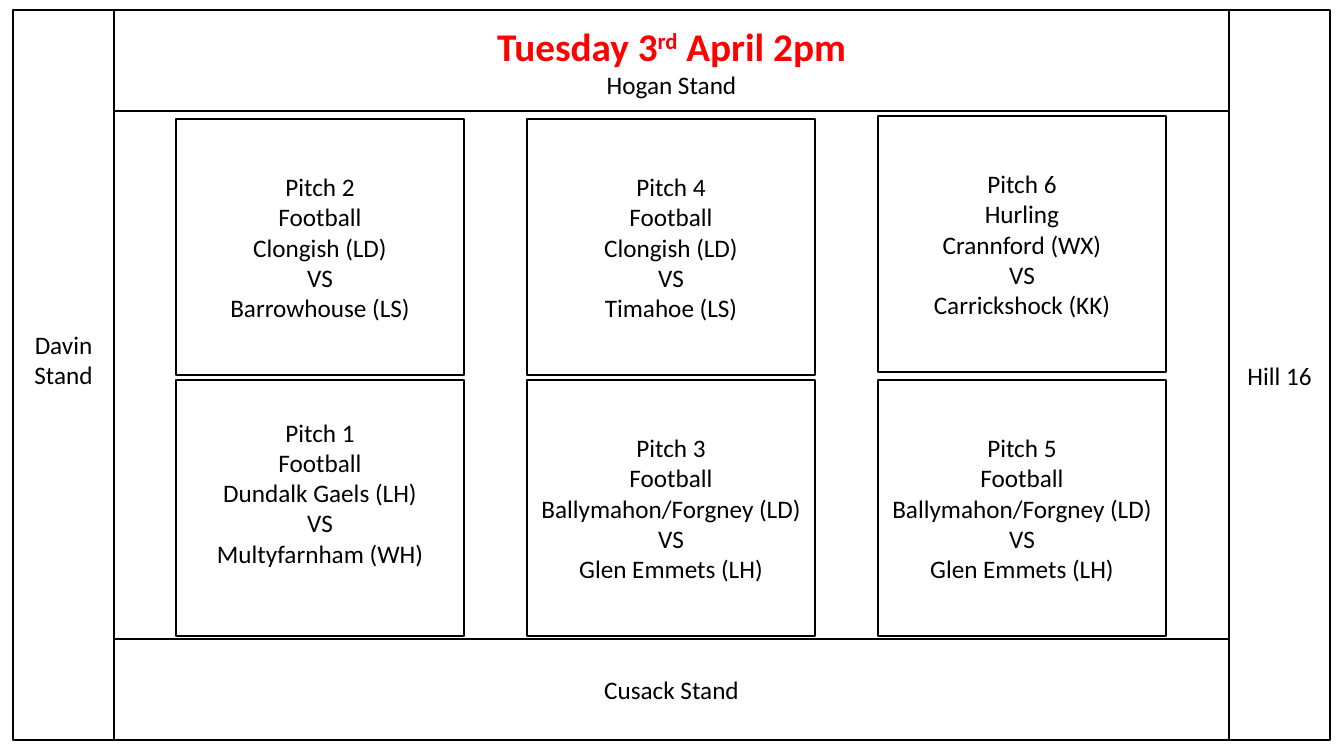
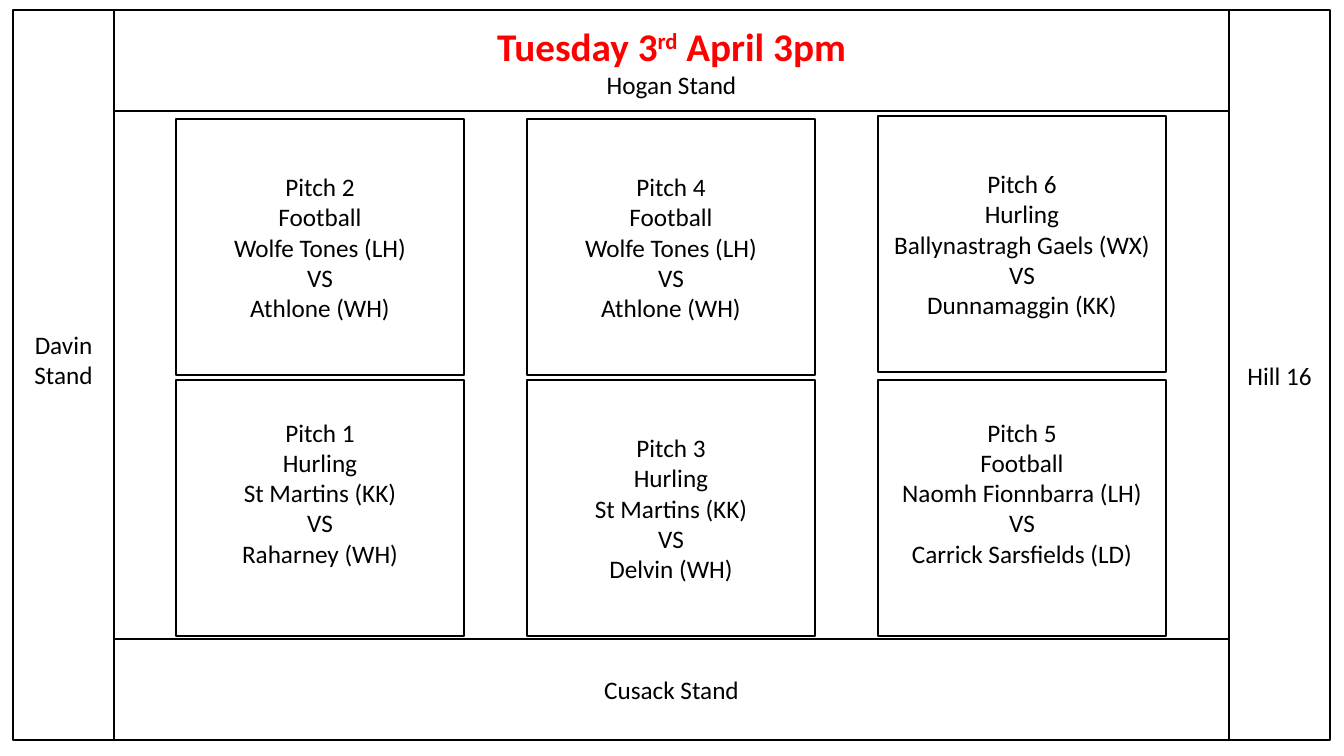
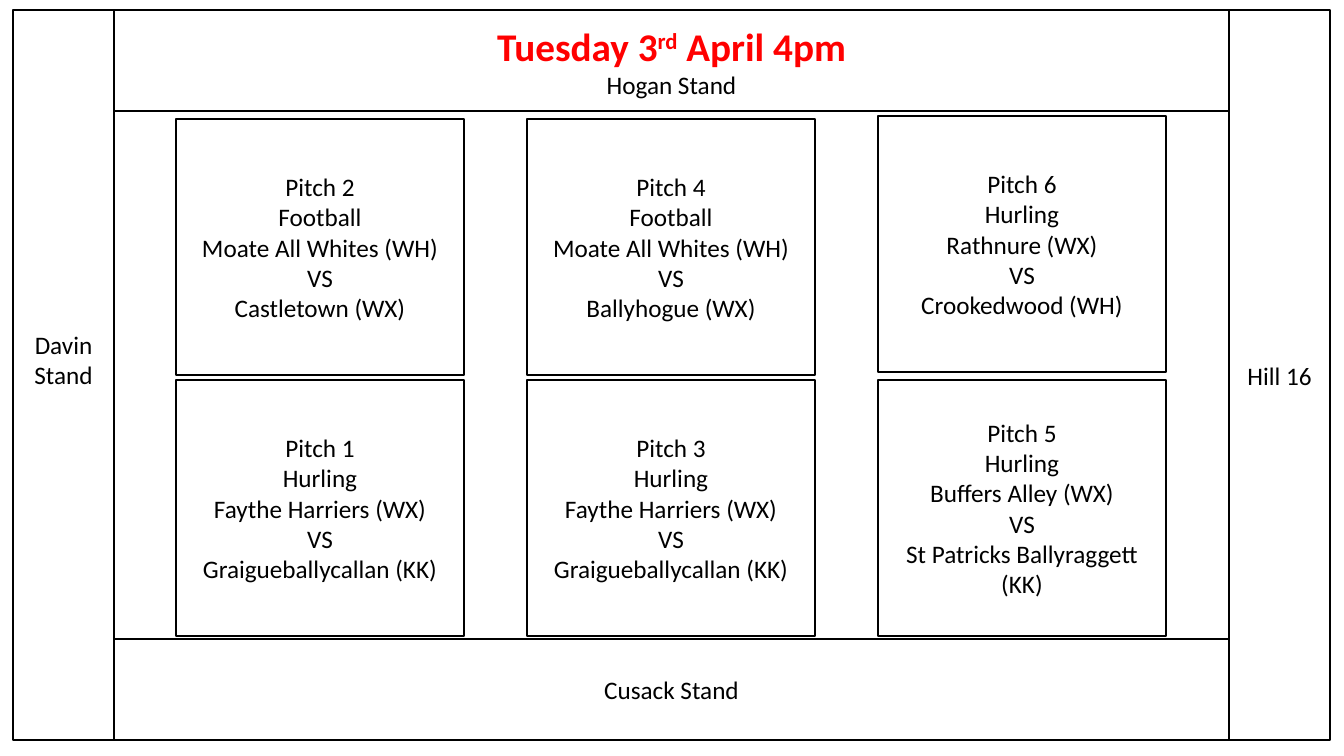
from pptx import Presentation
from pptx.dml.color import RGBColor
from pptx.enum.shapes import MSO_SHAPE
from pptx.enum.text import MSO_ANCHOR, PP_ALIGN
from pptx.util import Emu, Pt

ROUNDS = [
    ("2pm", {1}, [
        (2, "Football", "Clongish (LD)", "Barrowhouse (LS)"),
        (4, "Football", "Clongish (LD)", "Timahoe (LS)"),
        (6, "Hurling", "Crannford (WX)", "Carrickshock (KK)"),
        (1, "Football", "Dundalk Gaels (LH)", "Multyfarnham (WH)"),
        (3, "Football", "Ballymahon/Forgney (LD)", "Glen Emmets (LH)"),
        (5, "Football", "Ballymahon/Forgney (LD)", "Glen Emmets (LH)"),
    ]),
    ("3pm", {1, 5}, [
        (2, "Football", "Wolfe Tones (LH)", "Athlone (WH)"),
        (4, "Football", "Wolfe Tones (LH)", "Athlone (WH)"),
        (6, "Hurling", "Ballynastragh Gaels (WX)", "Dunnamaggin (KK)"),
        (1, "Hurling", "St Martins (KK)", "Raharney (WH)"),
        (3, "Hurling", "St Martins (KK)", "Delvin (WH)"),
        (5, "Football", "Naomh Fionnbarra (LH)", "Carrick Sarsfields (LD)"),
    ]),
    ("4pm", set(), [
        (2, "Football", "Moate All Whites (WH)", "Castletown (WX)"),
        (4, "Football", "Moate All Whites (WH)", "Ballyhogue (WX)"),
        (6, "Hurling", "Rathnure (WX)", "Crookedwood (WH)"),
        (1, "Hurling", "Faythe Harriers (WX)", "Graigueballycallan (KK)"),
        (3, "Hurling", "Faythe Harriers (WX)", "Graigueballycallan (KK)"),
        (5, "Hurling", "Buffers Alley (WX)", "St Patricks Ballyraggett (KK)"),
    ]),
]

WIDE, HIGH = 1344, 756
LEFT, TOP, BAND = 13, 10, 101
SPAN, TALL = 1317, 730
INNER = SPAN - 2 * BAND
PITCH_W, PITCH_H = 288, 256
PITCH_X, STEP = 176, 351
ROWS = (119, 380)
LIFT = 3
PAD = 36


def px(n):
    return Emu(round(n * 914400 / 100.8))


def ink(code):
    return RGBColor.from_string(code)


def apply(target, form):
    for name, value in form.items():
        setattr(target, name, value)


BODY = {"name": "Calibri", "size": Pt(18), "bold": False}
HEAD = {"name": "Calibri", "size": Pt(28), "bold": True}
FRAME = {"word_wrap": True, "vertical_anchor": MSO_ANCHOR.MIDDLE}


def write(para, text, form=BODY, code="000000", base=0):
    para.alignment = PP_ALIGN.CENTER
    run = para.add_run()
    run.text = text
    apply(run.font, form)
    run.font.color.rgb = ink(code)
    if base:
        run._r.get_or_add_rPr().set("baseline", str(base))


def box(slide, x, y, w, h, lines, pad=False):
    shape = slide.shapes.add_shape(MSO_SHAPE.RECTANGLE, px(x), px(y), px(w), px(h))
    shape.shadow.inherit = False
    shape.fill.background()
    apply(shape.line, {"width": Pt(1)})
    shape.line.color.rgb = ink("000000")
    frame = shape.text_frame
    apply(frame, FRAME)
    if pad:
        frame.margin_bottom = px(PAD)
    for i, line in enumerate(lines):
        para = frame.add_paragraph() if i else frame.paragraphs[0]
        if isinstance(line, str):
            write(para, line)
        else:
            for text, base in line:
                write(para, text, HEAD, "FF0000", base)


def ground(slide, time):
    title = [("Tuesday 3", 0), ("rd", 30000), (f" April {time}", 0)]
    mid, end = LEFT + BAND, LEFT + SPAN - BAND
    box(slide, LEFT, TOP, BAND, TALL, ["Davin Stand"], True)
    box(slide, end, TOP, BAND, TALL, ["Hill 16"])
    box(slide, mid, TOP, INNER, BAND, [title, "Hogan Stand"])
    box(slide, mid, TOP + TALL - BAND, INNER, BAND, ["Cusack Stand"])


def main():
    deck = Presentation()
    apply(deck, {"slide_width": px(WIDE), "slide_height": px(HIGH)})
    for time, raised, games in ROUNDS:
        slide = deck.slides.add_slide(deck.slide_layouts[6])
        ground(slide, time)
        for i, (pitch, sport, home, away) in enumerate(games):
            row, col = divmod(i, 3)
            y = ROWS[row] - (LIFT if pitch == 6 else 0)
            lines = [f"Pitch {pitch}", sport, home, "VS", away]
            box(slide, PITCH_X + col * STEP, y, PITCH_W, PITCH_H, lines, pitch in raised)
    deck.save("out.pptx")


if __name__ == "__main__":
    main()
